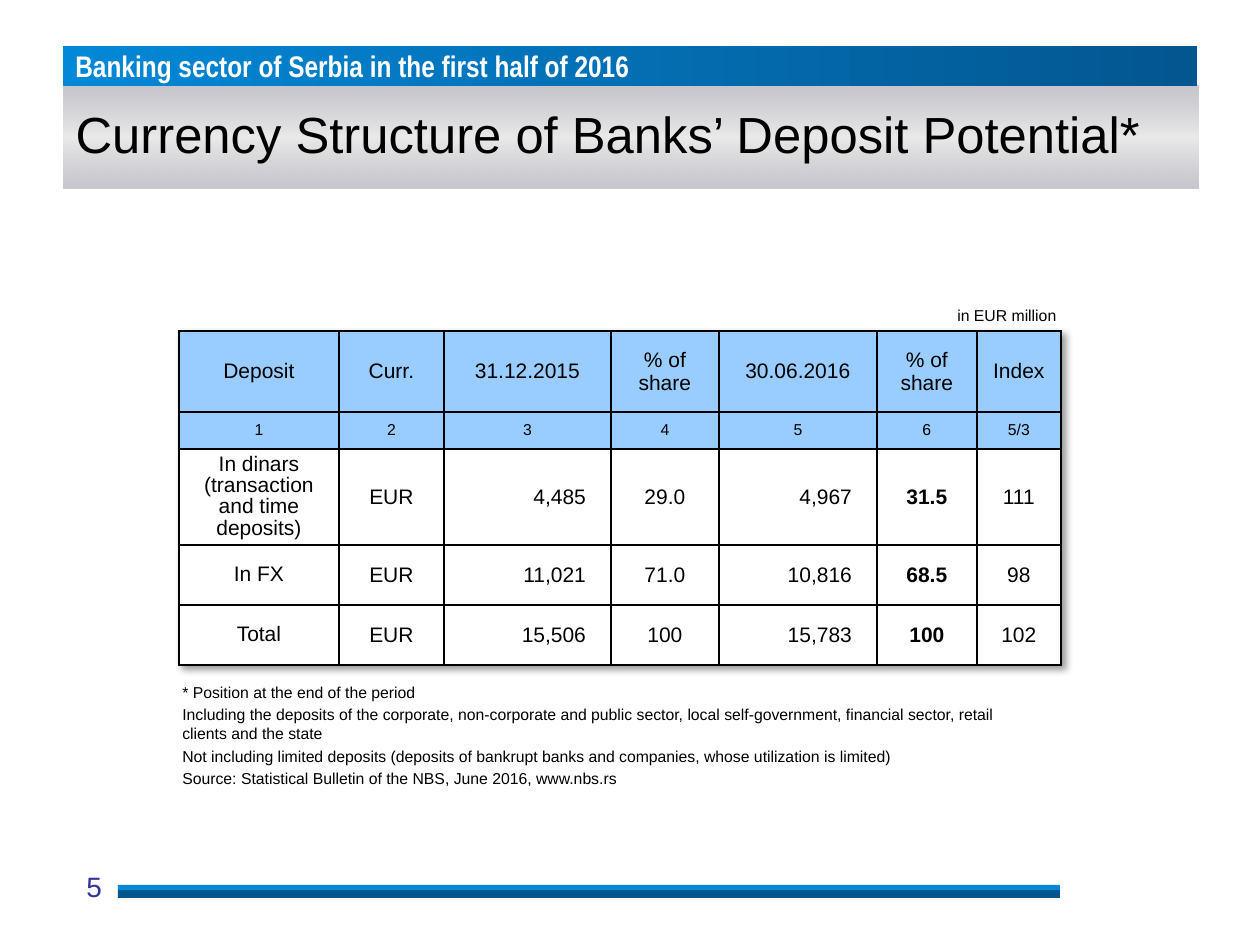
"""Build the slide on the currency structure of banks' deposits."""
from lxml.etree import SubElement
from pptx import Presentation
from pptx.dml.color import RGBColor as RGB
from pptx.enum.shapes import MSO_SHAPE as SHAPE
from pptx.enum.text import MSO_ANCHOR as ANCHOR, MSO_AUTO_SIZE as AUTO, PP_ALIGN as ALIGN
from pptx.oxml import parse_xml
from pptx.oxml.ns import nsdecls, qn
from pptx.util import Emu, Pt

COLORS = {"light": "0388D7", "dark": "035690", "silver": "B9B7C0", "pale": "EAEAEA",
          "header": "99CCFF", "white": "FFFFFF", "black": "000000", "number": "333399"}
BANNER = "Banking sector of Serbia in the first half of 2016"
TITLE = "Currency Structure of Banks’ Deposit Potential*"
UNIT = "in EUR million"
PAGE = "5"
ROWS = [
    ["Deposit", "Curr.", "31.12.2015", "% of share", "30.06.2016", "% of share", "Index"],
    ["1", "2", "3", "4", "5", "6", "5/3"],
    ["In dinars (transaction and time deposits)", "EUR", "4,485", "29.0", "4,967", "31.5", "111"],
    ["In FX", "EUR", "11,021", "71.0", "10,816", "68.5", "98"],
    ["Total", "EUR", "15,506", "100", "15,783", "100", "102"],
]
NOTES = [
    "* Position at the end of the period",
    "Including the deposits of the corporate, non-corporate and public sector, "
    "local self-government, financial sector, retail clients and the state",
    "Not including limited deposits (deposits of bankrupt banks and companies, "
    "whose utilization is limited)",
    "Source: Statistical Bulletin of the NBS, June 2016, www.nbs.rs",
]
COL_WIDTHS = [160, 105, 167, 108, 158, 100, 84]
ROW_HEIGHTS = [81, 37, 96, 60, 60]
AMOUNT_COLS, BOLD_COL, HEADER_ROWS = (2, 4), 5, 2
BARS = [((118, 890, 942, 8), "dark"), ((118, 885, 942, 5), "light")]


def px(n):
    return Emu(round(n * 914400 / 126))


def box(*lengths):
    return [px(n) for n in lengths]


def write(p, text, size, color="black", font="Arial", bold=False, align=ALIGN.LEFT):
    p.alignment = align
    r = p.add_run()
    r.text = text
    r.font.size, r.font.name, r.font.bold = Pt(size), font, bold
    r.font.color.rgb = RGB.from_string(COLORS[color])


def add_rect(slide, at):
    sp = slide.shapes.add_shape(SHAPE.RECTANGLE, *box(*at))
    sp.shadow.inherit = False
    sp.line.fill.background()
    return sp


def add_text(slide, at, wrap=True, anchor=ANCHOR.MIDDLE):
    tf = slide.shapes.add_textbox(*box(*at)).text_frame
    tf.word_wrap, tf.vertical_anchor = wrap, anchor
    return tf


def fill_gradient(sp, stops, angle):
    sp.fill.gradient()
    sp.fill.gradient_angle = angle
    gs_list = next(sp._element.spPr.iter(qn("a:gsLst")))
    for gs in list(gs_list):
        gs_list.remove(gs)
    for pos, color, alpha in stops:
        gs = SubElement(gs_list, qn("a:gs"), pos=str(pos * 1000))
        clr = SubElement(gs, qn("a:srgbClr"), val=COLORS[color])
        if alpha < 100:
            SubElement(clr, qn("a:alpha"), val=str(alpha * 1000))


def add_borders(cell, row, col):
    body, amounts = row >= HEADER_ROWS, col >= 2
    heavy = {
        "L": col == 0 or body and col == 2,
        "R": col == len(COL_WIDTHS) - 1 or body and col == 1,
        "T": row == 0 or row == HEADER_ROWS and amounts,
        "B": row == len(ROWS) - 1 or row == HEADER_ROWS - 1 and amounts,
    }
    for side, thick in heavy.items():
        ln = SubElement(cell._tc.get_or_add_tcPr(), qn(f"a:ln{side}"),
                        w=str(Pt(1.5 if thick else 1)))
        SubElement(SubElement(ln, qn("a:solidFill")), qn("a:srgbClr"), val=COLORS["black"])


def add_deposit_table(slide):
    at = box(179, 331, sum(COL_WIDTHS), sum(ROW_HEIGHTS))
    table = slide.shapes.add_table(len(ROWS), len(COL_WIDTHS), *at).table
    table.first_row = table.horz_banding = False
    table._tbl.tblPr.insert(0, parse_xml(
        f'<a:effectLst {nsdecls("a")}><a:outerShdw blurRad="50800" dist="38100" dir="2700000" '
        'algn="tl" rotWithShape="0"><a:srgbClr val="000000"><a:alpha val="40000"/></a:srgbClr>'
        '</a:outerShdw></a:effectLst>'))
    for column, width in zip(table.columns, COL_WIDTHS):
        column.width = px(width)
    for i, (values, height) in enumerate(zip(ROWS, ROW_HEIGHTS)):
        table.rows[i].height = px(height)
        body = i >= HEADER_ROWS
        for j, text in enumerate(values):
            cell = table.cell(i, j)
            amount = body and j in AMOUNT_COLS
            add_borders(cell, i, j)
            cell.fill.solid()
            cell.fill.fore_color.rgb = RGB.from_string(COLORS["white" if body else "header"])
            cell.vertical_anchor = ANCHOR.MIDDLE
            cell.margin_left, cell.margin_right = px(9), px(25 if amount else 9)
            cell.margin_top = cell.margin_bottom = 0
            p = cell.text_frame.paragraphs[0]
            write(p, text, 9 if i == 1 else 12, bold=body and j == BOLD_COL,
                  align=ALIGN.RIGHT if amount else ALIGN.CENTER)
            if body and j == 0:
                p.line_spacing = 0.9


def main():
    prs = Presentation()
    prs.slide_width, prs.slide_height = px(1260), px(945)
    slide = prs.slides.add_slide(prs.slide_layouts[5])

    banner = add_rect(slide, (63, 46, 1134, 40))
    fill_gradient(banner, [(0, "light", 100), (100, "dark", 100)], 0)
    tf = banner.text_frame
    tf.margin_top = tf.margin_bottom = 0
    tf.vertical_anchor = ANCHOR.MIDDLE
    write(tf.paragraphs[0], BANNER, 17, "white", "Arial Narrow", True)

    for at, color in BARS:
        bar = add_rect(slide, at)
        bar.fill.solid()
        bar.fill.fore_color.rgb = RGB.from_string(COLORS[color])

    title = slide.shapes.title
    title.left, title.top, title.width, title.height = box(63, 86, 1135, 103)
    fill_gradient(title, [(0, "silver", 79), (50, "pale", 100), (100, "silver", 79)], 90)
    tf = title.text_frame
    tf.auto_size, tf.vertical_anchor = AUTO.NONE, ANCHOR.MIDDLE
    write(tf.paragraphs[0], TITLE, 29)
    tf.paragraphs[0].line_spacing = 0.9

    page = add_text(slide, (54, 863, 80, 55), anchor=ANCHOR.TOP)
    write(page.paragraphs[0], PAGE, 16, "number", align=ALIGN.CENTER)

    notes = add_text(slide, (170, 676, 844, 118))
    for i, note in enumerate(NOTES):
        p = notes.add_paragraph() if i else notes.paragraphs[0]
        write(p, note, 9)
        if i:
            p.space_before = Pt(2)

    write(add_text(slide, (945, 300, 125, 31), wrap=False).paragraphs[0], UNIT, 9)
    add_deposit_table(slide)
    prs.save("out.pptx")


if __name__ == "__main__":
    main()
